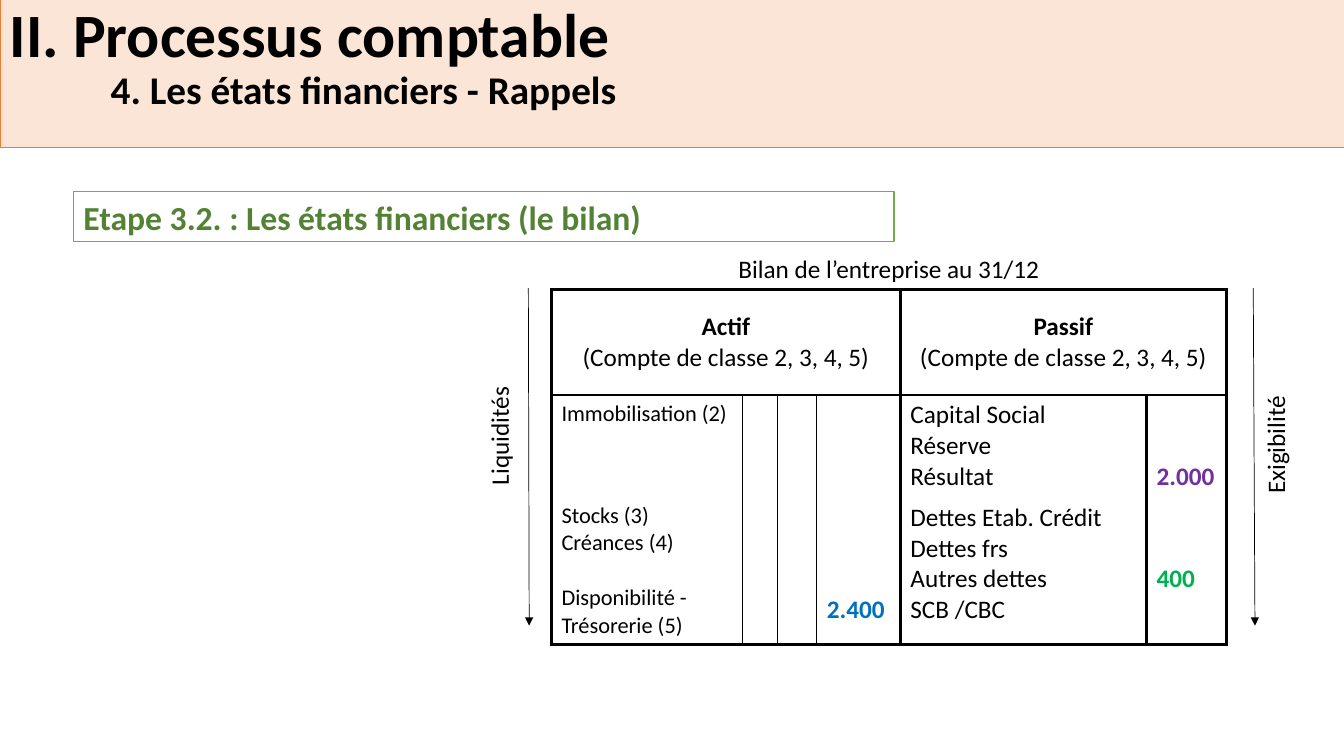
from lxml.etree import SubElement
from pptx import Presentation
from pptx.dml.color import RGBColor
from pptx.enum.shapes import MSO_CONNECTOR, MSO_SHAPE
from pptx.enum.text import MSO_ANCHOR, PP_ALIGN
from pptx.oxml.ns import qn
from pptx.util import Inches, Pt

COLORS = {
    "black": "000000", "white": "FFFFFF", "peach": "FBE5D6", "orange": "ED7D31",
    "green": "70AD47", "dark_green": "548235", "purple": "7030A0",
    "blue": "0070C0", "bright_green": "00B050",
}
GRID_COLUMNS = 32
LINE_HEIGHT = 1.22


class SlideBuilder:
    font_name = "Calibri"

    def __init__(self, presentation):
        self.slide = presentation.slides.add_slide(presentation.slide_layouts[6])
        self.unit = presentation.slide_width / GRID_COLUMNS

    def grid(self, *lengths):
        return [round(length * self.unit) for length in lengths]

    def color(self, name):
        return RGBColor.from_string(COLORS[name])

    def set_lines(self, frame, lines, size=18, color="black", bold=False, align=PP_ALIGN.LEFT):
        for index, line in enumerate(lines):
            paragraph = frame.paragraphs[0] if index == 0 else frame.add_paragraph()
            paragraph.text = line
            paragraph.alignment = align
            paragraph.font.name = self.font_name
            paragraph.font.size = Pt(size)
            paragraph.font.bold = bold
            paragraph.font.color.rgb = self.color(color)
        return frame.paragraphs

    def panel(self, box, fill, outline, width, lines, anchor=MSO_ANCHOR.TOP, **style):
        shape = self.slide.shapes.add_shape(MSO_SHAPE.RECTANGLE, *self.grid(*box))
        shape.shadow.inherit = False
        shape.fill.solid()
        shape.fill.fore_color.rgb = self.color(fill)
        shape.line.color.rgb = self.color(outline)
        shape.line.width = Pt(width)
        shape.text_frame.word_wrap = True
        shape.text_frame.vertical_anchor = anchor
        return self.set_lines(shape.text_frame, lines, **style)

    def vertical_label(self, box, text):
        frame = self.slide.shapes.add_textbox(*self.grid(*box)).text_frame
        frame.word_wrap = True
        frame._txBody.bodyPr.set("vert", "vert270")
        self.set_lines(frame, [text])

    def arrow(self, start, end):
        connector = self.slide.shapes.add_connector(
            MSO_CONNECTOR.STRAIGHT, *self.grid(*start, *end))
        connector.line.color.rgb = self.color("black")
        connector.line.width = Pt(0.5)
        SubElement(connector.line._get_or_add_ln(), qn("a:tailEnd"), type="triangle")
        SubElement(connector._element.spPr, qn("a:effectLst"))

    def table(self, left, top, columns, rows):
        box = self.grid(left, top, sum(columns), sum(rows))
        table = self.slide.shapes.add_table(len(rows), len(columns), *box).table
        table.first_row = table.horz_banding = False
        for column, width in zip(table.columns, self.grid(*columns)):
            column.width = width
        for row, height in zip(table.rows, self.grid(*rows)):
            row.height = height
        return table

    def cell(self, cell, lines, skipped_lines=0, anchor=MSO_ANCHOR.TOP, **style):
        cell.vertical_anchor = anchor
        cell.margin_top = Inches(0.05) + Pt(18 * LINE_HEIGHT * skipped_lines)
        return self.set_lines(cell.text_frame, lines, **style)

    def rule_table(self, table, horizontal, vertical):
        for row in range(len(table.rows)):
            for column in range(len(table.columns)):
                cell = table.cell(row, column)
                cell.fill.background()
                last = column + (cell.span_width if cell.is_merge_origin else 1)
                widths = {
                    "L": vertical[row].get(column), "R": vertical[row].get(last),
                    "T": horizontal.get(row), "B": horizontal.get(row + 1),
                }
                self.borders(cell, widths)

    def borders(self, cell, widths):
        properties = cell._tc.get_or_add_tcPr()
        for index, (side, width) in enumerate(widths.items()):
            border = SubElement(properties, qn(f"a:ln{side}"))
            properties.insert(index, border)
            if width:
                border.set("w", str(Pt(width)))
                fill = SubElement(border, qn("a:solidFill"))
                SubElement(fill, qn("a:srgbClr"), val=COLORS["black"])
            else:
                SubElement(border, qn("a:noFill"))


def add_balance_sheet(builder):
    table = builder.table(13.13, 5.93, [4.54, 0.84, 0.94, 1.99, 5.86, 1.9],
                          [0.96, 2.5, 2.4, 3.46])
    for row, first, last in [(0, 0, 5), (1, 0, 3), (1, 4, 5)]:
        table.cell(row, first).merge(table.cell(row, last))
    body_rules = {0: 2.25, 1: 1, 2: 1, 3: 1, 4: 3, 5: 3, 6: 2.25}
    builder.rule_table(table, {1: 2.25, 2: 1.5, 4: 2.25},
                       [{}, {0: 2.25, 4: 3, 6: 2.25}, body_rules, body_rules])

    builder.cell(table.cell(0, 0), ["Bilan de l’entreprise au 31/12"], align=PP_ALIGN.CENTER)
    for column, heading in [(0, "Actif"), (4, "Passif")]:
        paragraphs = builder.cell(
            table.cell(1, column), [heading, "(Compte de classe 2, 3, 4, 5)"],
            anchor=MSO_ANCHOR.MIDDLE, align=PP_ALIGN.CENTER)
        paragraphs[0].font.bold = True

    builder.cell(table.cell(2, 0), ["Immobilisation (2)"], size=16)
    assets = builder.cell(
        table.cell(3, 0),
        ["Stocks (3)", "Créances (4)", "Disponibilité - Trésorerie (5)"], size=16)
    assets[2].space_before = Pt(16 * LINE_HEIGHT)
    builder.cell(table.cell(2, 4), ["Capital Social", "Réserve", "Résultat"])
    builder.cell(table.cell(3, 4),
                 ["Dettes Etab. Crédit", "Dettes frs", "Autres dettes", "SCB /CBC"])

    for row, column, amount, skipped_lines, color in [
        (2, 5, "2.000", 2, "purple"),
        (3, 3, "2.400", 3, "blue"),
        (3, 5, "400", 2, "bright_green"),
    ]:
        builder.cell(table.cell(row, column), [amount], skipped_lines, color=color, bold=True)


def main():
    presentation = Presentation()
    presentation.slide_width = Inches(13.33)
    presentation.slide_height = Inches(7.5)
    builder = SlideBuilder(presentation)

    add_balance_sheet(builder)
    for start, end, label_left, label_top, label in [
        (12.58, 12.6, 11.4, 8.93, "Liquidités"),
        (29.84, 29.88, 29.88, 9.14, "Exigibilité"),
    ]:
        builder.arrow((start, 6.86), (end, 14.9))
        builder.vertical_label((label_left, label_top, 1.2, 2.86), label)

    builder.panel((1.75, 4.56, 19.54, 1.2), "white", "green", 1,
                  ["Etape 3.2. : Les états financiers (le bilan)"],
                  MSO_ANCHOR.MIDDLE, size=24, color="dark_green", bold=True)
    title, subtitle = builder.panel(
        (0, -0.02, GRID_COLUMNS, 3.53), "peach", "orange", 0.5,
        ["II. Processus comptable", "4. Les états financiers - Rappels"], size=44, bold=True)
    title.line_spacing = subtitle.line_spacing = 0.9
    subtitle.font.size = Pt(28)
    subtitle._p.get_or_add_pPr().set("marL", str(Inches(1)))

    presentation.save("out.pptx")


if __name__ == "__main__":
    main()
